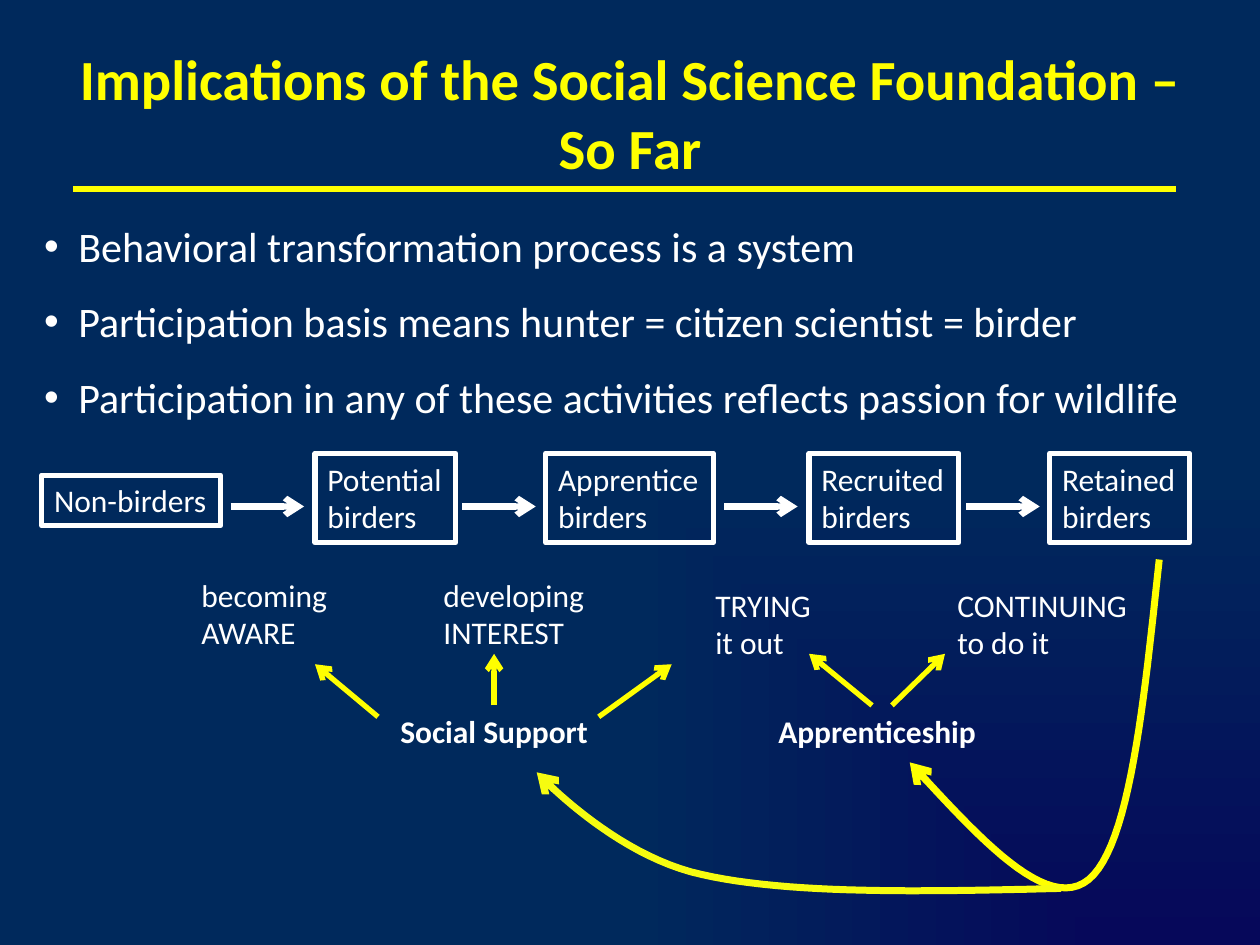
from dataclasses import dataclass

from lxml import etree
from pptx import Presentation
from pptx.dml.color import RGBColor
from pptx.enum.shapes import MSO_CONNECTOR, MSO_SHAPE
from pptx.enum.text import MSO_ANCHOR, MSO_AUTO_SIZE, PP_ALIGN
from pptx.oxml.ns import qn
from pptx.util import Cm, Pt

STRAIGHT = MSO_CONNECTOR.STRAIGHT
RECTANGLE = MSO_SHAPE.RECTANGLE
TOP, MIDDLE = MSO_ANCHOR.TOP, MSO_ANCHOR.MIDDLE
GROW, FIXED = MSO_AUTO_SIZE.SHAPE_TO_FIT_TEXT, MSO_AUTO_SIZE.NONE
LEFT, CENTER = PP_ALIGN.LEFT, PP_ALIGN.CENTER
TITLE_ONLY = 5
ONE_LINE, TWO_LINES = 1.02, 1.8  # label heights in cm


@dataclass(frozen=True)
class Theme:
    font: str = "Calibri"
    text: str = "FFFFFF"
    accent: str = "FFFF00"
    loop: str = "F6FC10"
    corner: str = "06085A"
    background: str = "00295C"
    title_size: float = 32.4
    bullet_size: float = 24
    label_size: float = 18


class SlideBuilder:
    def __init__(self, slide, theme):
        self.slide = slide
        self.shapes = slide.shapes
        self.theme = theme

    def background(self):
        fill = self.slide.background.fill
        fill.gradient()
        colors = (self.theme.corner, self.theme.background)
        for stop, color, position in zip(fill.gradient_stops, colors, (0, 1)):
            stop.color.rgb = RGBColor.from_string(color)
            stop.position = position
        # Radiate from the bottom right corner
        gradient = self.slide._element.find(".//" + qn("a:gradFill"))
        gradient.remove(gradient.find(qn("a:lin")))
        radial = etree.SubElement(gradient, qn("a:path"), {"path": "rect"})
        etree.SubElement(radial, qn("a:fillToRect"), l="100000", t="100000")

    def set_text(self, frame, text, size, color, bold=False, align=LEFT):
        frame.text = text
        for paragraph in frame.paragraphs:
            paragraph.alignment = align
            for run in paragraph.runs:
                run.font.name = self.theme.font
                run.font.size = Pt(size)
                run.font.bold = bold
                run.font.color.rgb = RGBColor.from_string(color)

    def title(self, text, left, top, width, height):
        title = self.shapes.title
        title.left, title.top = Cm(left), Cm(top)
        title.width, title.height = Cm(width), Cm(height)
        frame = title.text_frame
        frame.word_wrap, frame.auto_size = True, FIXED
        frame.vertical_anchor = MIDDLE
        self.set_text(frame, text, self.theme.title_size, self.theme.accent, True, CENTER)

    def bullets(self, items, left, top, width, height):
        frame = self.shapes.add_textbox(Cm(left), Cm(top), Cm(width), Cm(height)).text_frame
        frame.word_wrap, frame.auto_size = True, GROW
        self.set_text(frame, "\n".join(items), self.theme.bullet_size, self.theme.text)
        for paragraph in frame.paragraphs:
            paragraph.line_spacing = 1.5
            properties = paragraph._p.get_or_add_pPr()
            properties.set("marL", str(Cm(0.69)))
            properties.set("indent", str(-Cm(0.69)))
            etree.SubElement(properties, qn("a:buFont"), typeface="Arial")
            etree.SubElement(properties, qn("a:buChar"), char="•")

    def label(self, text, left, top, width, bold=False, boxed=False):
        height = TWO_LINES if "\n" in text else ONE_LINE
        area = Cm(left), Cm(top), Cm(width), Cm(height)
        if boxed:
            label = self.shapes.add_shape(RECTANGLE, *area)
            label.shadow.inherit = False
            label.fill.background()
            self.stroke(label.line, self.theme.text, 3)
        else:
            label = self.shapes.add_textbox(*area)
        frame = label.text_frame
        frame.word_wrap, frame.auto_size = False, GROW
        frame.vertical_anchor = TOP
        self.set_text(frame, text, self.theme.label_size, self.theme.text, bold)

    def stroke(self, line, color, weight, arrow=False):
        line.color.rgb = RGBColor.from_string(color)
        line.width = Pt(weight)
        if arrow:
            etree.SubElement(line._get_or_add_ln(), qn("a:tailEnd"), type="arrow")

    def line(self, start, end, color, weight, arrow=True):
        ends = [Cm(value) for value in (*start, *end)]
        connector = self.shapes.add_connector(STRAIGHT, *ends)
        self.stroke(connector.line, color, weight, arrow)
        etree.SubElement(connector._element.spPr, qn("a:effectLst"))

    def curve(self, start, segments, color, steps=24):
        """Draw a chain of cubic Bézier segments ending in an arrowhead."""
        points, origin = [], start
        for segment in segments:
            controls = (origin, *segment)
            for step in range(1, steps + 1):
                t = step / steps
                weights = ((1 - t) ** 3, 3 * t * (1 - t) ** 2, 3 * t**2 * (1 - t), t**3)
                points.append(tuple(
                    Cm(sum(w * c[axis] for w, c in zip(weights, controls)))
                    for axis in (0, 1)))
            origin = segment[-1]
        builder = self.shapes.build_freeform(Cm(start[0]), Cm(start[1]))
        builder.add_line_segments(points, close=False)
        curve = builder.convert_to_shape()
        curve.shadow.inherit = False
        curve.fill.background()
        self.stroke(curve.line, color, 4, arrow=True)


def main():
    deck = Presentation()
    deck.slide_width, deck.slide_height = Cm(25.4), Cm(19.05)
    theme = Theme()
    page = SlideBuilder(deck.slides.add_slide(deck.slide_layouts[TITLE_ONLY]), theme)

    # Heading
    page.background()
    page.title("Implications of the Social Science Foundation – So Far", 1.27, 0.64, 22.86, 3.25)
    page.line((1.47, 3.81), (23.7, 3.81), theme.accent, 3, arrow=False)

    # Stages of becoming a birder
    for stage, left, top, width in (
        ("Non-birders", 0.84, 9.58, 3.61),
        ("Potential\nbirders", 6.35, 9.14, 2.84),
        ("Apprentice\nbirders", 11, 9.14, 3.38),
        ("Recruited\nbirders", 16.31, 9.14, 3.02),
        ("Retained\nbirders", 21.16, 9.14, 2.82),
    ):
        page.label(stage, left, top, width, boxed=True)
    for left in (4.65, 9.32, 14.6, 19.48):
        page.line((left, 10.21), (left + 1.48, 10.21), theme.text, 3.5)

    # Transitions between the stages
    for transition, left, top, width in (
        ("becoming\nAWARE", 3.81, 11.48, 3.07),
        ("developing\nINTEREST", 8.69, 11.48, 3.38),
        ("TRYING\nit out", 14.17, 11.68, 2.46),
        ("CONTINUING\nto do it", 19.05, 11.68, 3.96),
    ):
        page.label(transition, left, top, width)

    # Influences and the transitions they support
    page.label("Social Support", 7.82, 14.22, 4.32, bold=True)
    page.label("Apprenticeship", 15.44, 14.22, 4.52, bold=True)
    for influence, transition in (
        ((7.62, 14.45), (6.35, 13.39)),
        ((9.96, 14.22), (9.96, 13.18)),
        ((12.07, 14.45), (13.54, 13.39)),
        ((17.58, 14.22), (16.31, 13.18)),
        ((17.98, 14.22), (19.05, 13.18)),
    ):
        page.line(influence, transition, theme.accent, 3)

    # Feedback from retained birders to both influences
    page.curve((23.37, 11.28), (
        ((23.06, 14.15), (22.78, 17.04), (21.95, 17.73)),
        ((21.11, 18.42), (19.74, 16.89), (18.34, 15.37)),
    ), theme.accent)
    page.curve((21.39, 17.91), (
        ((18.64, 17.98), (15.9, 18.03), (14.15, 17.63)),
        ((12.37, 17.25), (10.82, 15.57), (10.82, 15.57)),
    ), theme.loop)

    # Key points
    page.bullets((
        "Behavioral transformation process is a system",
        "Participation basis means hunter = citizen scientist = birder",
        "Participation in any of these activities reflects passion for wildlife",
    ), 0.64, 3.81, 24.13, 4.88)

    deck.save("out.pptx")


if __name__ == "__main__":
    main()
